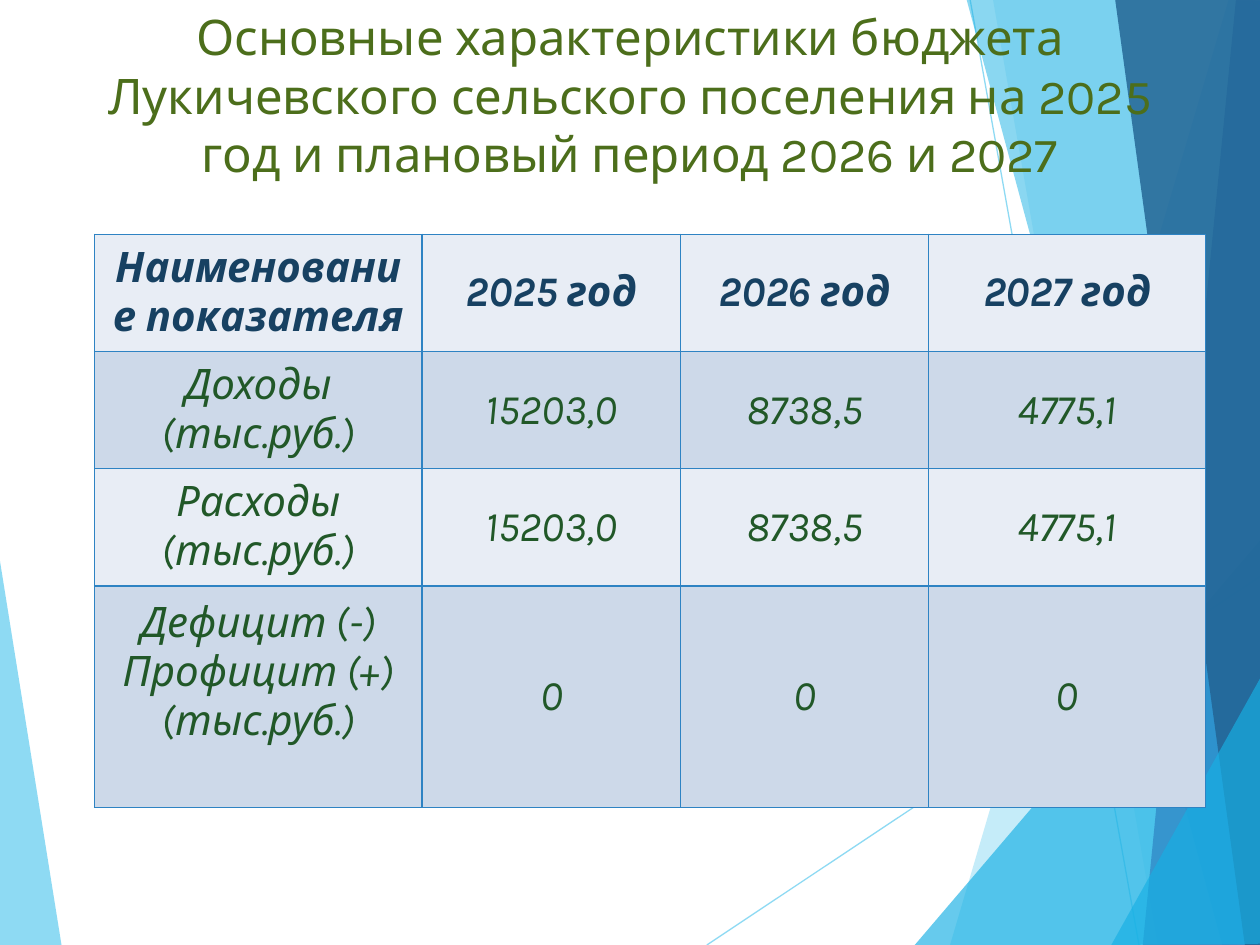
from typing import NamedTuple

from lxml import etree
from pptx import Presentation
from pptx import util as u
from pptx.dml.color import RGBColor
from pptx.enum import shapes, text
from pptx.oxml.ns import qn

SKY = RGBColor(0x5F, 0xCB, 0xEF)
CYAN = RGBColor(0x17, 0xB0, 0xE4)
BLUE = RGBColor(0x2E, 0x83, 0xC3)
NAVY = RGBColor(0x22, 0x62, 0x92)
OLIVE = RGBColor(0x4C, 0x6E, 0x1B)
HEADER = RGBColor(0x17, 0x41, 0x62)
GREEN = RGBColor(0x21, 0x58, 0x28)
BANDS = RGBColor(0xE8, 0xED, 0xF5), RGBColor(0xCD, 0xD9, 0xE9)
FONT = "Karla"


class Facet(NamedTuple):
    points: list[tuple[float, float]]
    color: RGBColor
    alpha: int


class Ray(NamedTuple):
    start: tuple[float, float]
    end: tuple[float, float]


class Row(NamedTuple):
    label: list[str]
    values: list[str]
    height: float
    bottom: float = 0.05


LEFT_FACET = Facet([(-0.01, 4.39), (0.49, 7.51), (-0.01, 7.5)], SKY, 70)
RAYS = [Ray((5.61, 7.5), (10.01, 4.57)), Ray((7.7, 0), (9.04, 7.5))]
RIGHT_FACETS = [
    Facet([(9.75, 0), (7.54, 7.5), (10.02, 7.51), (10.01, 0.01)], SKY, 36),
    Facet([(7.88, -0.01), (9.19, 7.5), (10.01, 7.5), (10.01, -0.01)], SKY, 20),
    Facet([(7.26, 7.5), (10, 4.29), (10.01, 7.5)], CYAN, 66),
    Facet([(7.67, -0.01), (9.7, 7.5), (10.01, 7.49), (10.01, -0.01)], CYAN, 50),
    Facet([(9.81, -0.01), (9.07, 7.5), (10.01, 7.5), (10, -0.01)], BLUE, 70),
    Facet([(8.85, -0.01), (9.88, 7.5), (10.02, 7.5), (10, -0.01)], NAVY, 82),
    Facet([(8.82, 7.5), (10.02, 5.35), (10.02, 7.49)], CYAN, 66),
]
COLUMNS = [2.6, 2.05, 1.97, 2.2]
ROWS = [
    Row(["Наименование показателя"], ["2025 год", "2026 год", "2027 год"], 0.93),
    Row(["Доходы", "(тыс.руб.)"], ["15203,0", "8738,5", "4775,1"], 0.93),
    Row(["Расходы", "(тыс.руб.)"], ["15203,0", "8738,5", "4775,1"], 0.93),
    Row(["Дефицит (-)", "Профицит (+) (тыс.руб.)"], ["0", "0", "0"], 1.76, 0.44),
]


def set_alpha(element, percent: int) -> None:
    color = next(element.iter(qn("a:srgbClr")))
    etree.SubElement(color, qn("a:alpha")).set("val", str(percent * 1000))


def draw_facet(s, facet: Facet) -> None:
    points = [(u.Inches(x), u.Inches(y)) for x, y in facet.points]
    builder = s.shapes.build_freeform(*points[0], scale=1.0)
    builder.add_line_segments(points[1:], close=True)
    sp = builder.convert_to_shape()
    sp.shadow.inherit = False
    sp.fill.solid()
    sp.fill.fore_color.rgb = facet.color
    sp.line.fill.background()
    set_alpha(sp._element.spPr, facet.alpha)


def draw_ray(s, ray: Ray) -> None:
    ends = [u.Inches(v) for v in ray.start + ray.end]
    sp = s.shapes.add_connector(shapes.MSO_CONNECTOR.STRAIGHT, *ends)
    sp.line.color.rgb = SKY
    sp.line.width = u.Pt(0.75)
    set_alpha(sp._element.spPr, 70)
    etree.SubElement(sp._element.spPr, qn("a:effectLst"))


def write(tf, lines: list[str], color: RGBColor, **style) -> None:
    for i, line in enumerate(lines):
        p = tf.paragraphs[0] if i == 0 else tf.add_paragraph()
        p.alignment = text.PP_ALIGN.CENTER
        r = p.add_run()
        r.text = line
        r.font.color.rgb = color
        for name, value in ({"name": FONT} | style).items():
            setattr(r.font, name, value)


def add_borders(cell) -> None:
    props = cell._tc.get_or_add_tcPr()
    for i, side in enumerate(("lnL", "lnR", "lnT", "lnB")):
        line = etree.Element(qn(f"a:{side}"), w=str(u.Pt(1)))
        fill = etree.SubElement(line, qn("a:solidFill"))
        etree.SubElement(fill, qn("a:srgbClr")).set("val", str(BLUE))
        props.insert(i, line)


def draw_title(s) -> None:
    sp = s.shapes.title
    place = {"left": 0.5, "top": 0, "width": 9, "height": 1.7}
    for name, value in place.items():
        setattr(sp, name, u.Inches(value))
    tf = sp.text_frame
    tf.word_wrap = True
    tf.auto_size = text.MSO_AUTO_SIZE.NONE
    tf.vertical_anchor = text.MSO_ANCHOR.TOP
    title = ("Основные характеристики бюджета Лукичевского сельского поселения "
             "на 2025 год и плановый период 2026 и 2027")
    write(tf, [title], OLIVE, size=u.Pt(28))
    s.shapes._spTree.append(sp._element)


def draw_table(s) -> None:
    frame = s.shapes.add_table(
        len(ROWS), len(COLUMNS), u.Inches(0.75), u.Inches(1.86),
        u.Inches(sum(COLUMNS)), u.Inches(sum(row.height for row in ROWS)))
    table = frame.table
    table.first_row = table.horz_banding = False
    for column, width in zip(table.columns, COLUMNS):
        column.width = u.Inches(width)
    for i, row in enumerate(ROWS):
        table.rows[i].height = u.Inches(row.height)
        for j, lines in enumerate([row.label] + [[v] for v in row.values]):
            cell = table.cell(i, j)
            cell.fill.solid()
            cell.fill.fore_color.rgb = BANDS[i % 2]
            cell.vertical_anchor = text.MSO_ANCHOR.MIDDLE
            write(cell.text_frame, lines, GREEN if i else HEADER,
                  size=u.Pt(24), bold=i == 0, italic=True)
            add_borders(cell)
        table.cell(i, 0).margin_bottom = u.Inches(row.bottom)


def main() -> None:
    prs = Presentation()
    prs.slide_width, prs.slide_height = u.Inches(10), u.Inches(7.5)
    s = prs.slides.add_slide(prs.slide_layouts[5])
    draw_facet(s, LEFT_FACET)
    for ray in RAYS:
        draw_ray(s, ray)
    for facet in RIGHT_FACETS:
        draw_facet(s, facet)
    draw_title(s)
    draw_table(s)
    prs.save("out.pptx")


if __name__ == "__main__":
    main()
